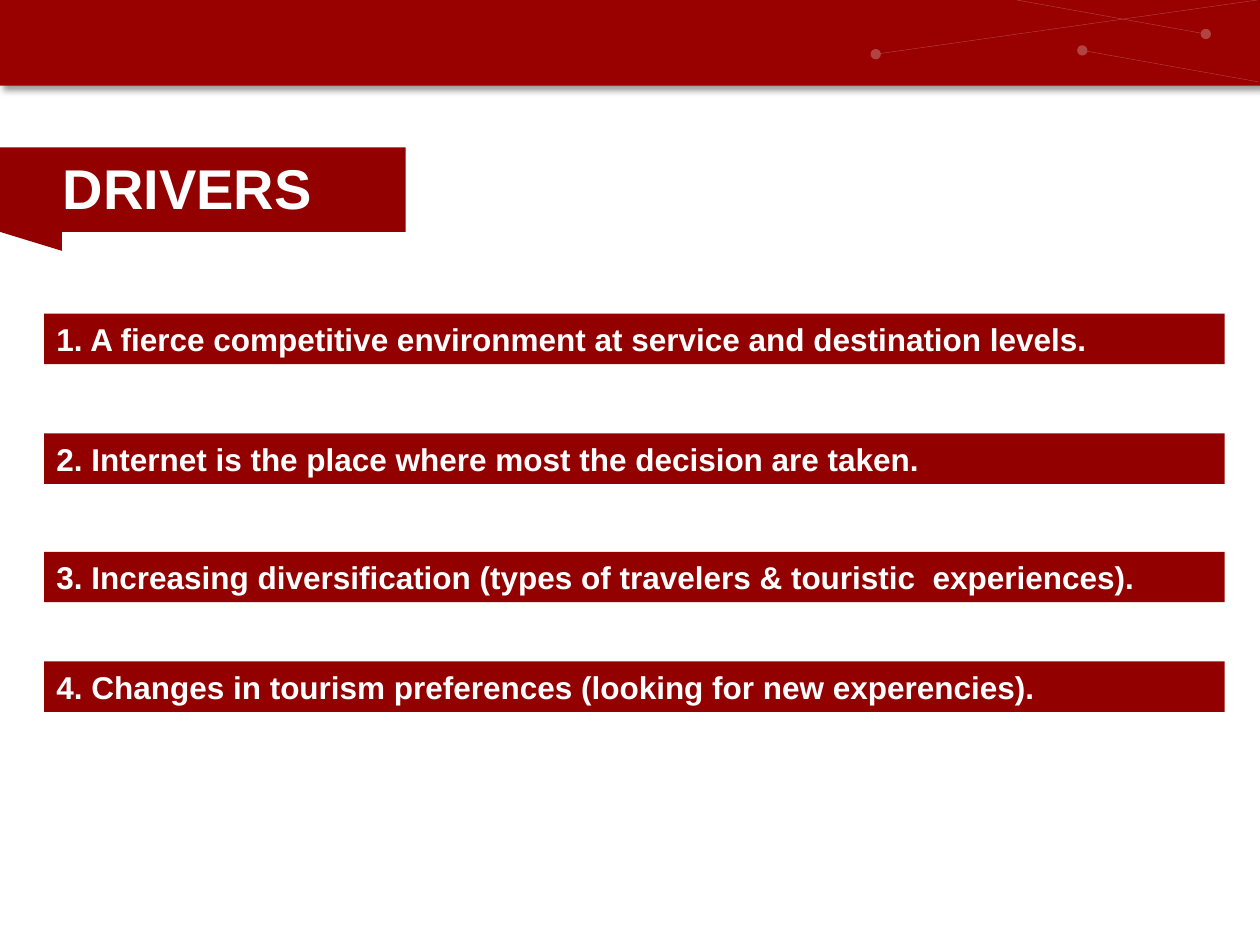
from lxml import etree
from pptx import Presentation
from pptx.dml.color import RGBColor
from pptx.enum.shapes import MSO_CONNECTOR, MSO_SHAPE
from pptx.enum.text import MSO_ANCHOR, MSO_AUTO_SIZE, PP_ALIGN
from pptx.oxml import parse_xml
from pptx.oxml.ns import nsdecls, qn
from pptx.util import Inches, Pt

RECTANGLE = MSO_SHAPE.RECTANGLE
RIGHT_TRIANGLE = MSO_SHAPE.RIGHT_TRIANGLE
STRAIGHT = MSO_CONNECTOR.STRAIGHT
MIDDLE = MSO_ANCHOR.MIDDLE
LEFT = PP_ALIGN.LEFT
GROW = MSO_AUTO_SIZE.SHAPE_TO_FIT_TEXT

BANNER_RED = "990000"
DARK_RED = "920000"
WHITE = "FFFFFF"


def add_block(kind, left, top, width, height, color):
    block = page.shapes.add_shape(
        kind, Inches(left), Inches(top), Inches(width), Inches(height))
    block.shadow.inherit = False
    block.fill.solid()
    block.fill.fore_color.rgb = RGBColor.from_string(color)
    block.line.fill.background()
    return block


def write_text(box, text, size):
    """Fill a box with one bold white line, aligned left."""
    frame = box.text_frame
    frame.word_wrap = True
    frame.auto_size = GROW
    para = frame.paragraphs[0]
    para.alignment = LEFT
    span = para.add_run()
    span.text = text
    span.font.name = "Arial"
    span.font.size = Pt(size)
    span.font.bold = True
    span.font.color.rgb = RGBColor.from_string(WHITE)


deck = Presentation()
deck.slide_width = Inches(10)
deck.slide_height = Inches(7.5)
page = deck.slides.add_slide(deck.slide_layouts[6])

# Banner with a soft shadow
banner = add_block(RECTANGLE, 0, 0, 10, 0.68, BANNER_RED)
effects = banner._element.spPr.find(qn("a:effectLst"))
effects.append(parse_xml(
    f'<a:outerShdw {nsdecls("a")} blurRad="{Pt(4)}" dist="{Pt(3)}" '
    'dir="2700000" algn="tl" rotWithShape="0"><a:srgbClr val="000000">'
    '<a:alpha val="40000"/></a:srgbClr></a:outerShdw>'))

# Faint lines on the banner, each ending in a dot
for x1, y1, x2, y2 in [(8.07, 0, 9.57, 0.27),
                       (9.98, 0, 6.95, 0.43),
                       (9.99, 0.65, 8.59, 0.4)]:
    ray = page.shapes.add_connector(
        STRAIGHT, Inches(x1), Inches(y1), Inches(x2), Inches(y2))
    ray.line.width = Pt(0.25)
    ray.line.color.rgb = RGBColor.from_string(WHITE)
    outline = ray.line._get_or_add_ln()
    tint = outline.find(".//" + qn("a:srgbClr"))
    etree.SubElement(tint, qn("a:alpha"), val="26000")
    etree.SubElement(outline, qn("a:tailEnd"), type="oval")
    etree.SubElement(ray._element.spPr, qn("a:effectLst"))

# Title ribbon and its fold
add_block(RECTANGLE, 0, 1.17, 3.22, 0.67, DARK_RED)
title = page.shapes.add_textbox(
    Inches(0.4), Inches(1.17), Inches(2.93), Inches(0.64))
write_text(title, "DRIVERS", 32)
fold = add_block(RIGHT_TRIANGLE, 0, 1.84, 0.49, 0.15, DARK_RED)
fold.rotation = 180

# Drivers
drivers = [
    (2.49, "1. A fierce competitive environment at service and destination levels."),
    (3.44, "2. Internet is the place where most the decision are taken."),
    (4.38, "3. Increasing diversification (types of travelers & touristic  experiences)."),
    (5.25, "4. Changes in tourism preferences (looking for new experencies)."),
]
for top, text in drivers:
    bar = add_block(RECTANGLE, 0.35, top, 9.37, 0.4, DARK_RED)
    bar.text_frame.vertical_anchor = MIDDLE
    write_text(bar, text, 18)

deck.save("out.pptx")
